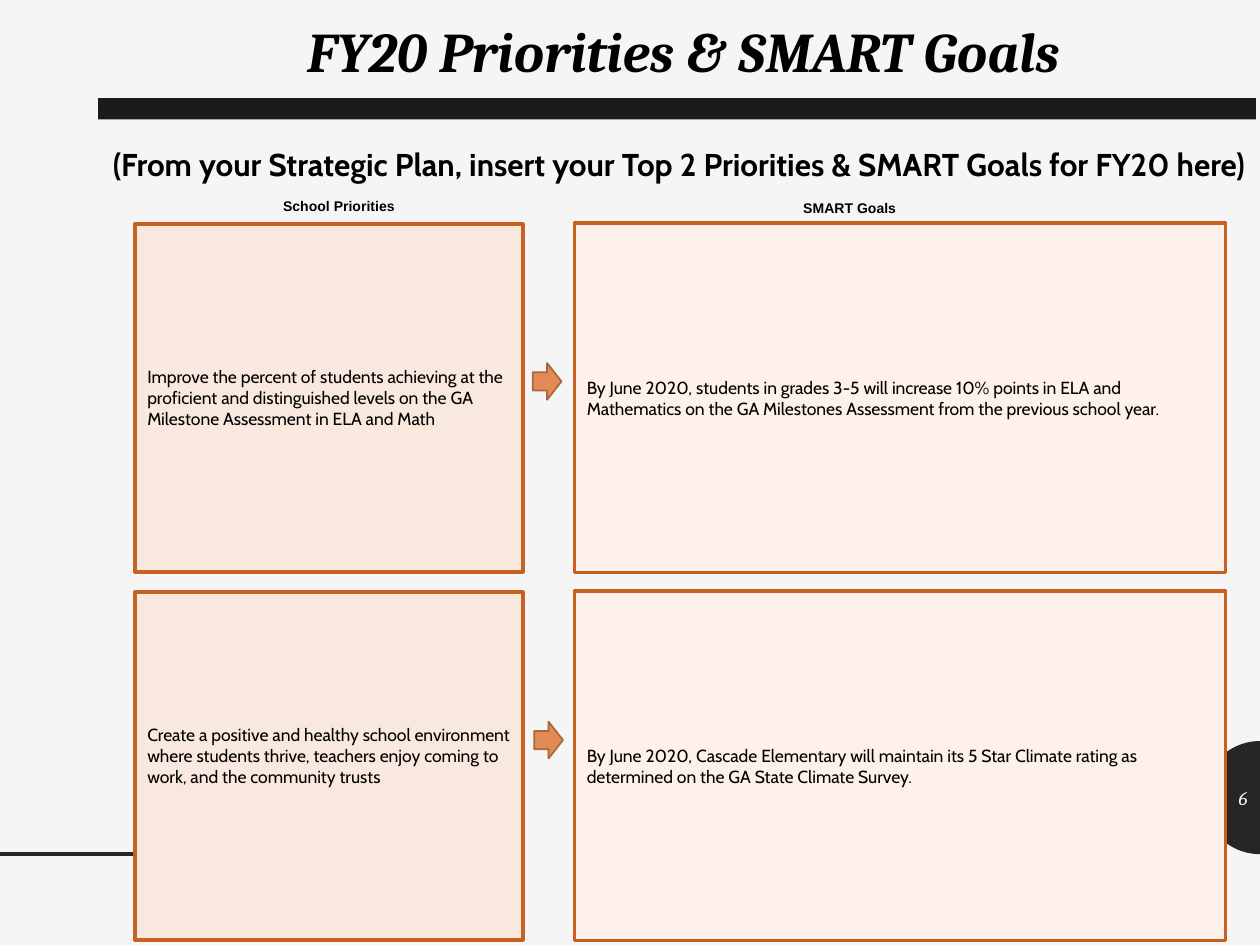
from dataclasses import dataclass
from math import cos, pi, sin

from lxml import etree
from pptx import Presentation
from pptx.dml.color import RGBColor
from pptx.enum.shapes import MSO_CONNECTOR, MSO_SHAPE
from pptx.enum.text import MSO_ANCHOR, MSO_AUTO_SIZE, PP_ALIGN
from pptx.oxml.ns import qn
from pptx.util import Cm, Pt

RECTANGLE = MSO_SHAPE.RECTANGLE
RIGHT_ARROW = MSO_SHAPE.RIGHT_ARROW
STRAIGHT = MSO_CONNECTOR.STRAIGHT
TOP, MIDDLE = MSO_ANCHOR.TOP, MSO_ANCHOR.MIDDLE
LEFT, CENTER, RIGHT = PP_ALIGN.LEFT, PP_ALIGN.CENTER, PP_ALIGN.RIGHT

BLACK, DARK, PAPER = "000000", "262626", "F5F5F5"
ROW_STEP = 7.42


@dataclass(frozen=True)
class Area:
    left: float
    top: float
    width: float
    height: float

    def lengths(self) -> tuple:
        return Cm(self.left), Cm(self.top), Cm(self.width), Cm(self.height)

    def down(self, distance: float) -> "Area":
        return Area(self.left, self.top + distance, self.width, self.height)


@dataclass(frozen=True)
class Style:
    font: str
    size: float
    color: str = BLACK
    bold: bool = False
    italic: bool = False
    align: PP_ALIGN = CENTER
    anchor: MSO_ANCHOR = TOP


@dataclass(frozen=True)
class Label:
    text: str
    area: Area
    style: Style
    wrap: bool = True


@dataclass(frozen=True)
class Goal:
    priority: str
    target: str
    arrow: Area
    priority_bottom_inset: float


TITLE = Style("Cambria", 32, bold=True, italic=True)
SUBTITLE = Style("Cabin", 18, bold=True)
HEADING = Style("Arial", 8, bold=True)
BODY = Style("Cabin", 10, align=LEFT, anchor=MIDDLE)
NUMBER = Style("Cambria", 11, PAPER, italic=True, align=RIGHT, anchor=MIDDLE)

PRIORITY_AREA = Area(2.72, 4.52, 7.82, 7.01)
TARGET_AREA = Area(11.58, 4.5, 13.13, 7.04)

LABELS = [
    Label("(From your Strategic Plan, insert your Top 2 Priorities & SMART Goals for FY20 here)",
          Area(1.98, 2.79, 23.42, 1.8), SUBTITLE, wrap=False),
    Label("School Priorities", Area(5.44, 3.86, 2.79, 0.61), HEADING, wrap=False),
    Label("SMART Goals", Area(15.49, 3.89, 3.28, 0.61), HEADING),
]

GOALS = [
    Goal("Improve the percent of students achieving at the proficient and distinguished levels "
         "on the GA Milestone Assessment in ELA and Math",
         "By June 2020, students in grades 3-5 will increase 10% points in ELA and Mathematics "
         "on the GA Milestones Assessment from the previous school year.",
         Area(10.74, 7.32, 0.58, 0.74), 0.13),
    Goal("Create a positive and healthy school environment where students thrive, teachers "
         "enjoy coming to work, and the community trusts",
         "By June 2020, Cascade Elementary will maintain its 5 Star Climate rating as "
         "determined on the GA State Climate Survey.",
         Area(10.77, 14.55, 0.58, 0.74), 0.56),
]


def rgb(color: str) -> RGBColor:
    return RGBColor.from_string(color)


def write(box, text: str, style: Style, wrap: bool = True) -> None:
    frame = box.text_frame
    frame.auto_size = MSO_AUTO_SIZE.NONE
    frame.word_wrap = wrap
    frame.vertical_anchor = style.anchor
    para = frame.paragraphs[0]
    para.alignment = style.align
    span = para.add_run()
    span.text = text
    span.font.name = style.font
    span.font.size = Pt(style.size)
    span.font.bold = style.bold
    span.font.italic = style.italic
    span.font.color.rgb = rgb(style.color)


def paint(shape, fill: str, line: str = "", weight: float = 0) -> None:
    shape.shadow.inherit = False
    shape.fill.solid()
    shape.fill.fore_color.rgb = rgb(fill)
    if line:
        shape.line.color.rgb = rgb(line)
        shape.line.width = Pt(weight)
    else:
        shape.line.fill.background()


def add_panel(page, area: Area, fill: str, text: str):
    panel = page.shapes.add_shape(RECTANGLE, *area.lengths())
    paint(panel, fill, "C76122", 2)
    write(panel, text, BODY)
    return panel


def add_label(page, label: Label) -> None:
    box = page.shapes.add_textbox(*label.area.lengths())
    write(box, label.text, label.style, label.wrap)


def add_half_disc(page, center_x: float, center_y: float, radius: float, steps: int = 48) -> None:
    angles = [pi / 2 + pi * step / steps for step in range(steps + 1)]
    points = [(Cm(center_x + radius * cos(angle)), Cm(center_y + radius * sin(angle)))
              for angle in angles]
    builder = page.shapes.build_freeform(*points[0])
    builder.add_line_segments(points[1:], close=True)
    paint(builder.convert_to_shape(), DARK)


def add_rule(page, right: float, height: float) -> None:
    rule = page.shapes.add_connector(STRAIGHT, Cm(0), Cm(height), Cm(right), Cm(height))
    rule.line.color.rgb = rgb(DARK)
    rule.line.width = Pt(2)
    etree.SubElement(rule.element.spPr, qn("a:effectLst"))


def add_goal(page, goal: Goal, offset: float) -> None:
    add_panel(page, TARGET_AREA.down(offset), "FDF1E9", goal.target)
    priority = add_panel(page, PRIORITY_AREA.down(offset), "F9E8DD", goal.priority)
    priority.text_frame.margin_bottom = Cm(goal.priority_bottom_inset)
    arrow = page.shapes.add_shape(RIGHT_ARROW, *goal.arrow.lengths())
    paint(arrow, "E28B55", "A7673F", 1)


def main() -> None:
    deck = Presentation()
    deck.slide_width, deck.slide_height = Cm(25.4), Cm(19.05)
    page = deck.slides.add_slide(deck.slide_layouts[5])
    page.background.fill.solid()
    page.background.fill.fore_color.rgb = rgb(PAPER)

    add_half_disc(page, 25.4, 16.08, 1.14)
    add_rule(page, 9.37, 17.22)
    bar = page.shapes.add_shape(RECTANGLE, *Area(1.98, 1.98, 23.34, 0.43).lengths())
    paint(bar, "1D1A1D")

    title = page.shapes.title
    title.left, title.top, title.width, title.height = Area(2.44, 0.2, 22.68, 1.63).lengths()
    write(title, "FY20 Priorities & SMART Goals", TITLE)

    for label in LABELS:
        add_label(page, label)
    for row, goal in enumerate(GOALS):
        add_goal(page, goal, row * ROW_STEP)
    add_label(page, Label("6", Area(24.26, 15.57, 1.14, 1.02), NUMBER))

    deck.save("out.pptx")


if __name__ == "__main__":
    main()
